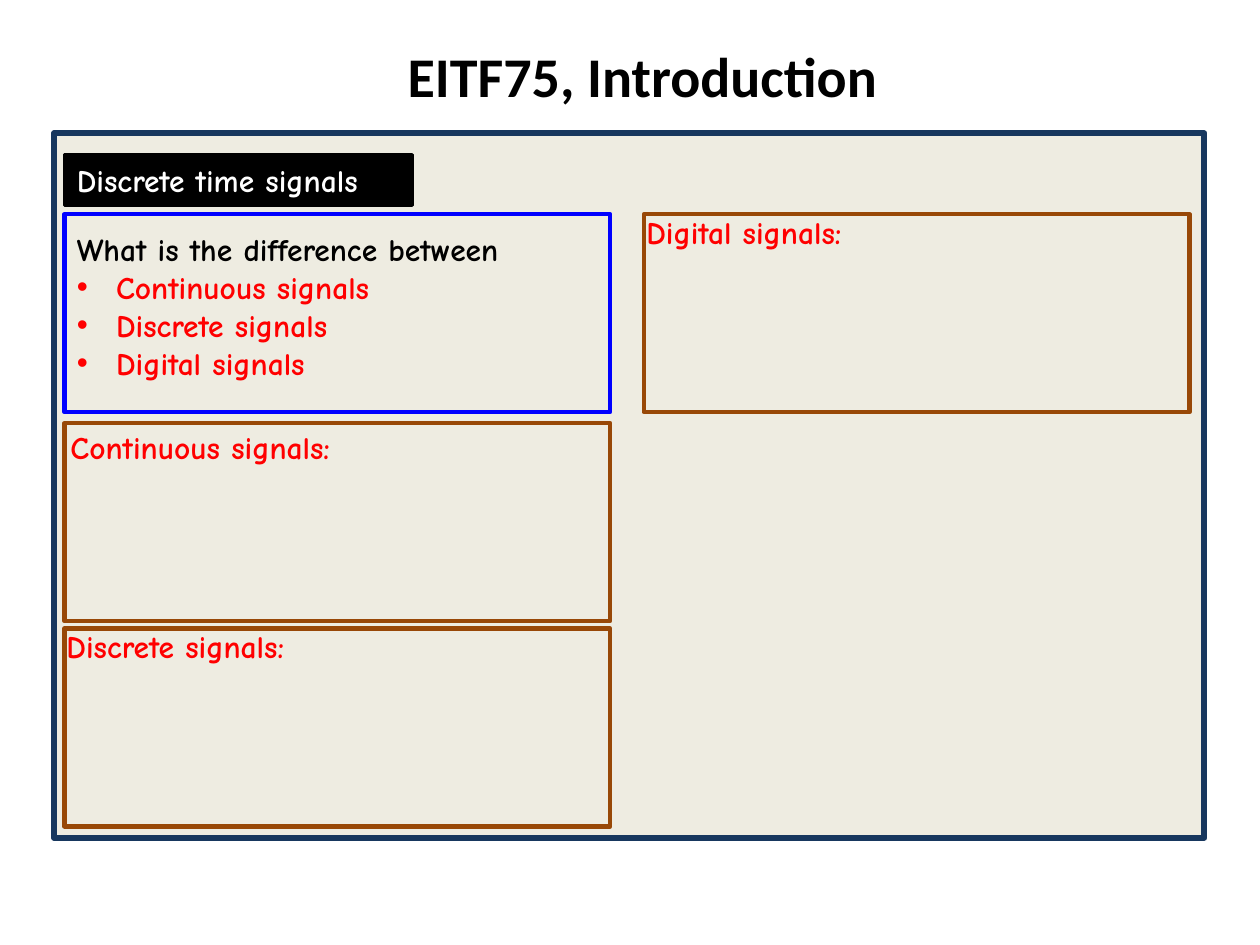
"""Build the slide that introduces discrete time signals."""
from dataclasses import dataclass
from typing import Optional

from lxml import etree
from pptx import Presentation
from pptx import util as u
from pptx.dml.color import RGBColor
from pptx.enum import shapes, text
from pptx.oxml import ns

BLACK = RGBColor(0x00, 0x00, 0x00)
WHITE = RGBColor(0xFF, 0xFF, 0xFF)
RED = RGBColor(0xFF, 0x00, 0x00)
BLUE = RGBColor(0x00, 0x00, 0xFF)
BROWN = RGBColor(0x98, 0x48, 0x07)
NAVY = RGBColor(0x17, 0x37, 0x5E)
CREAM = RGBColor(0xEE, 0xEC, 0xE1)

LEFT, RIGHT = 1.3, 12.98
TOP, WIDE, HIGH = 4.32, 11, 3.99
INDENT = u.Cm(0.79)


@dataclass
class Box:
    left: float
    top: float
    line: RGBColor
    wide: float = WIDE
    high: float = HIGH
    weight: float = 2.5
    fill: Optional[RGBColor] = None


@dataclass
class Label:
    left: float
    top: float
    words: str
    wide: float = 10.13
    high: float = 1.02
    color: RGBColor = RED
    font: str = "Comic Neue"
    size: int = 18


PANEL = Box(1.09, 2.69, NAVY, 23.19, 14.2, 3.5, CREAM)
TAG = Box(LEFT, 3.12, BLACK, 7.01, 1.02, 2, BLACK)
FRAMES = [
    Box(LEFT, TOP, BLUE),
    Box(LEFT, 8.53, BROWN),
    Box(LEFT, 12.67, BROWN),
    Box(RIGHT, TOP, BROWN),
]
TITLE = Label(2.16, 0.33, "EITF75, Introduction", 21.59, 2.36, BLACK, "Calibri", 32)
TOPIC = Label(LEFT, 3.12, "Discrete time signals", 7.01, color=WHITE)
ASK = Label(
    LEFT, 4.52,
    "What is the difference between\nContinuous signals\nDiscrete signals\nDigital signals",
    16.21, 4.11,
)
HEADS = [
    Label(1.17, 8.51, "Continuous signals:"),
    Label(1.09, 12.52, "Discrete signals:"),
    Label(12.78, 4.17, "Digital signals:"),
]


def draw_box(slide, box: Box):
    shape = slide.shapes.add_shape(
        shapes.MSO_SHAPE.RECTANGLE,
        u.Cm(box.left), u.Cm(box.top), u.Cm(box.wide), u.Cm(box.high),
    )
    shape.shadow.inherit = False
    if box.fill is None:
        shape.fill.background()
    else:
        shape.fill.solid()
        shape.fill.fore_color.rgb = box.fill
    shape.line.color.rgb = box.line
    shape.line.width = u.Pt(box.weight)
    return shape


def write(shape, label: Label):
    frame = shape.text_frame
    frame.word_wrap = True
    frame.vertical_anchor = text.MSO_ANCHOR.TOP
    frame.text = label.words
    for para in frame.paragraphs:
        para.alignment = text.PP_ALIGN.LEFT
        for run in para.runs:
            font = run.font
            font.name, font.size, font.bold = label.font, u.Pt(label.size), True
            font.color.rgb = label.color
    return frame


def draw_label(slide, label: Label):
    shape = slide.shapes.add_textbox(
        u.Cm(label.left), u.Cm(label.top), u.Cm(label.wide), u.Cm(label.high)
    )
    return write(shape, label)


def add_bullet(para) -> None:
    props = para._p.get_or_add_pPr()
    props.set("marL", str(INDENT))
    props.set("indent", str(-INDENT))
    etree.SubElement(props, ns.qn("a:buFont"), typeface="Arial")
    etree.SubElement(props, ns.qn("a:buChar"), char="•")


def main() -> None:
    deck = Presentation()
    deck.slide_width, deck.slide_height = u.Cm(25.4), u.Cm(19.05)
    slide = deck.slides.add_slide(deck.slide_layouts[6])

    draw_box(slide, PANEL)
    title = draw_label(slide, TITLE)
    title.vertical_anchor = text.MSO_ANCHOR.MIDDLE
    title.paragraphs[0].alignment = text.PP_ALIGN.CENTER

    lead, *items = draw_label(slide, ASK).paragraphs
    lead.runs[0].font.color.rgb = BLACK
    for item in items:
        add_bullet(item)

    write(draw_box(slide, TAG), TOPIC)
    for frame in FRAMES:
        draw_box(slide, frame)
    for head in HEADS:
        draw_label(slide, head)
    deck.save("out.pptx")


if __name__ == "__main__":
    main()
